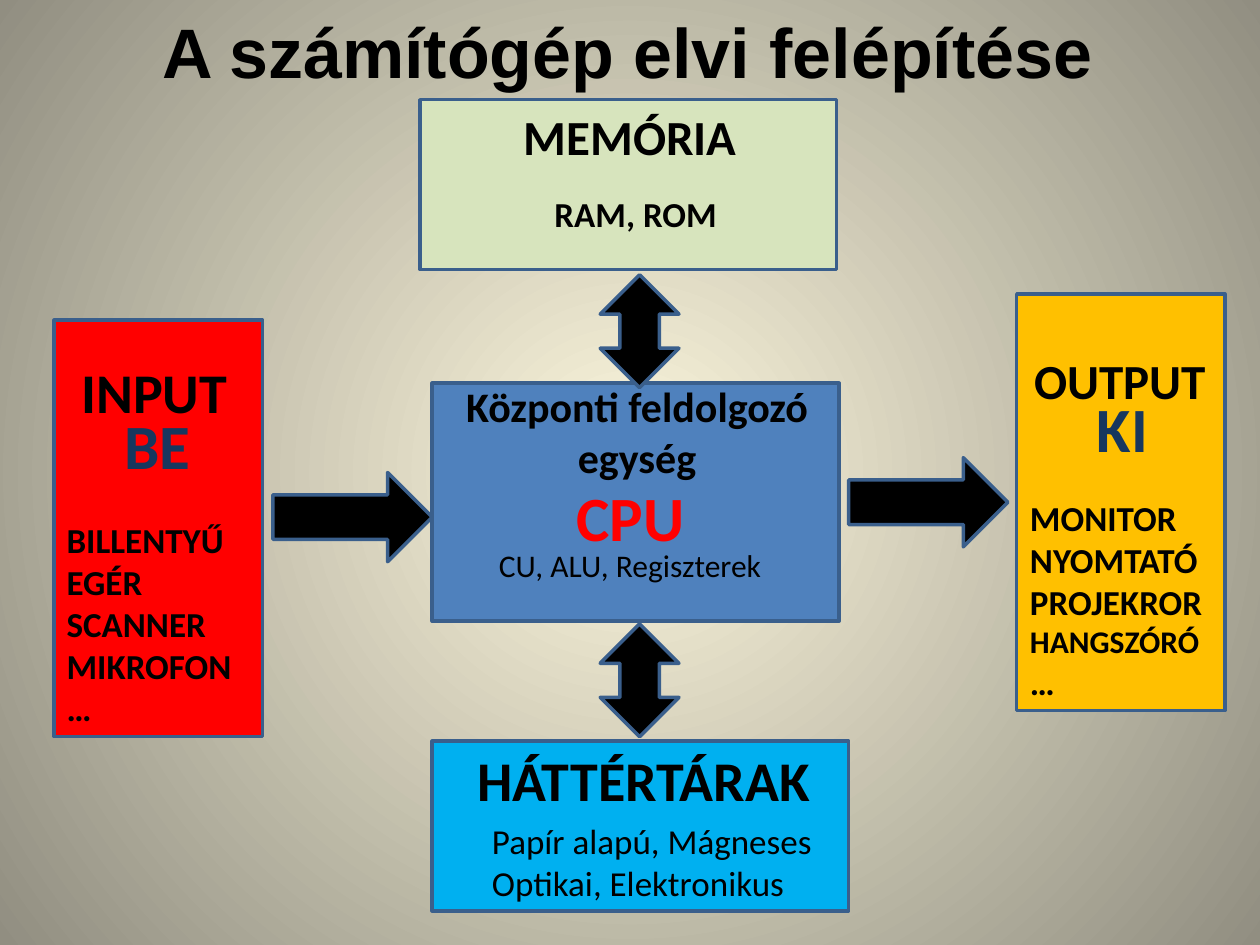
from lxml import etree
from pptx import Presentation
from pptx.dml.color import RGBColor
from pptx.enum import shapes, text
from pptx.oxml.ns import qn
from pptx.util import Pt

BLACK = RGBColor(0x00, 0x00, 0x00)
RED = RGBColor(0xFF, 0x00, 0x00)
NAVY = RGBColor(0x17, 0x37, 0x5E)
BLUE = RGBColor(0x4F, 0x81, 0xBD)
OUTLINE = RGBColor(0x3A, 0x5F, 0x8C)
GREEN = RGBColor(0xD7, 0xE4, 0xBD)
SKY = RGBColor(0x00, 0xB0, 0xF0)
AMBER = RGBColor(0xFF, 0xC0, 0x00)
CREAM = RGBColor(0xFC, 0xF7, 0xDD)
GRAY = RGBColor(0x91, 0x8E, 0x81)

CENTER = text.PP_ALIGN.CENTER
LEFT = text.PP_ALIGN.LEFT
RECTANGLE = shapes.MSO_SHAPE.RECTANGLE
RIGHT_ARROW = shapes.MSO_SHAPE.RIGHT_ARROW
UP_DOWN_ARROW = shapes.MSO_SHAPE.UP_DOWN_ARROW


def write(box, lines, size, color=BLACK, bold=True, align=CENTER, font="Calibri"):
    frame = box.text_frame
    frame.word_wrap = True
    frame.auto_size = text.MSO_AUTO_SIZE.SHAPE_TO_FIT_TEXT
    frame.vertical_anchor = text.MSO_ANCHOR.TOP
    frame.text = lines
    for para in frame.paragraphs:
        para.alignment = align
        for span in para.runs:
            span.font.name = font
            span.font.size = Pt(size)
            span.font.bold = bold
            span.font.color.rgb = color


deck = Presentation()
deck.slide_width, deck.slide_height = Pt(720), Pt(540)
page = deck.slides.add_slide(deck.slide_layouts[5])

background = page.background.fill
background.gradient()
for stop, color in zip(background.gradient_stops, (CREAM, GRAY)):
    stop.color.rgb = color
gradient = page.element.find(".//" + qn("a:gradFill"))
gradient.remove(gradient.find(qn("a:lin")))
circle = etree.SubElement(gradient, qn("a:path"), path="circle")
etree.SubElement(circle, qn("a:fillToRect"), l="50000", t="50000", r="50000", b="50000")

title = page.shapes.title
title.left, title.top, title.width, title.height = Pt(52.5), Pt(1.5), Pt(612), Pt(55.5)
write(title, "A számítógép elvi felépítése", 40, font="Arial")

blocks = [
    (RECTANGLE, 247, 219, 232.5, 136, BLUE),
    (RECTANGLE, 240, 57, 238, 97, GREEN),
    (RECTANGLE, 247, 423.5, 238, 97, SKY),
    (RECTANGLE, 31, 183, 119, 238, RED),
    (RECTANGLE, 581, 168, 119, 238, AMBER),
    (RIGHT_ARROW, 156, 270, 91, 51, BLACK),
    (RIGHT_ARROW, 485, 261.5, 91, 51, BLACK),
    (UP_DOWN_ARROW, 343, 157, 45, 64.5, BLACK),
    (UP_DOWN_ARROW, 343, 356.5, 45, 64.5, BLACK),
]
for kind, left, top, width, height, color in blocks:
    block = page.shapes.add_shape(kind, Pt(left), Pt(top), Pt(width), Pt(height))
    block.shadow.inherit = False
    block.fill.solid()
    block.fill.fore_color.rgb = color
    block.line.color.rgb = OUTLINE
    block.line.width = Pt(2)

labels = [
    (256.5, 214, 215, 65.5, "Központi feldolgozó egység", 24, {}),
    (286.5, 270, 147.5, 51, "CPU", 36, {"color": RED}),
    (263.5, 308.5, 193, 29, "CU, ALU, Regiszterek", 18, {"bold": False}),
    (263.5, 57.5, 193, 41, "MEMÓRIA", 28, {}),
    (286.5, 106.5, 153.5, 31.5, "RAM, ROM", 20, {}),
    (256.5, 422.5, 222.5, 46, "HÁTTÉRTÁRAK", 32, {}),
    (274, 464.5, 204, 55.5, "Papír alapú, Mágneses\nOptikai, Elektronikus", 20,
     {"bold": False, "align": LEFT}),
    (39.5, 201, 102.5, 46, "INPUT", 32, {"align": LEFT}),
    (584, 196.5, 113, 41, "OUTPUT", 28, {"align": LEFT}),
    (52.5, 228.5, 75, 51, "BE", 36, {"color": NAVY}),
    (604, 219, 75, 51, "KI", 36, {"color": NAVY}),
    (31, 292.5, 119, 128, "BILLENTYŰ\nEGÉR\nSCANNER\nMIKROFON\n…", 20, {"align": LEFT}),
    (581.5, 280, 119, 126, "MONITOR\nNYOMTATÓ\nPROJEKROR\nHANGSZÓRÓ\n…", 20, {"align": LEFT}),
]
for left, top, width, height, lines, size, style in labels:
    label = page.shapes.add_textbox(Pt(left), Pt(top), Pt(width), Pt(height))
    write(label, lines, size, **style)

output_devices = label.text_frame
output_devices.paragraphs[3].runs[0].font.size = Pt(18)

deck.save("out.pptx")
